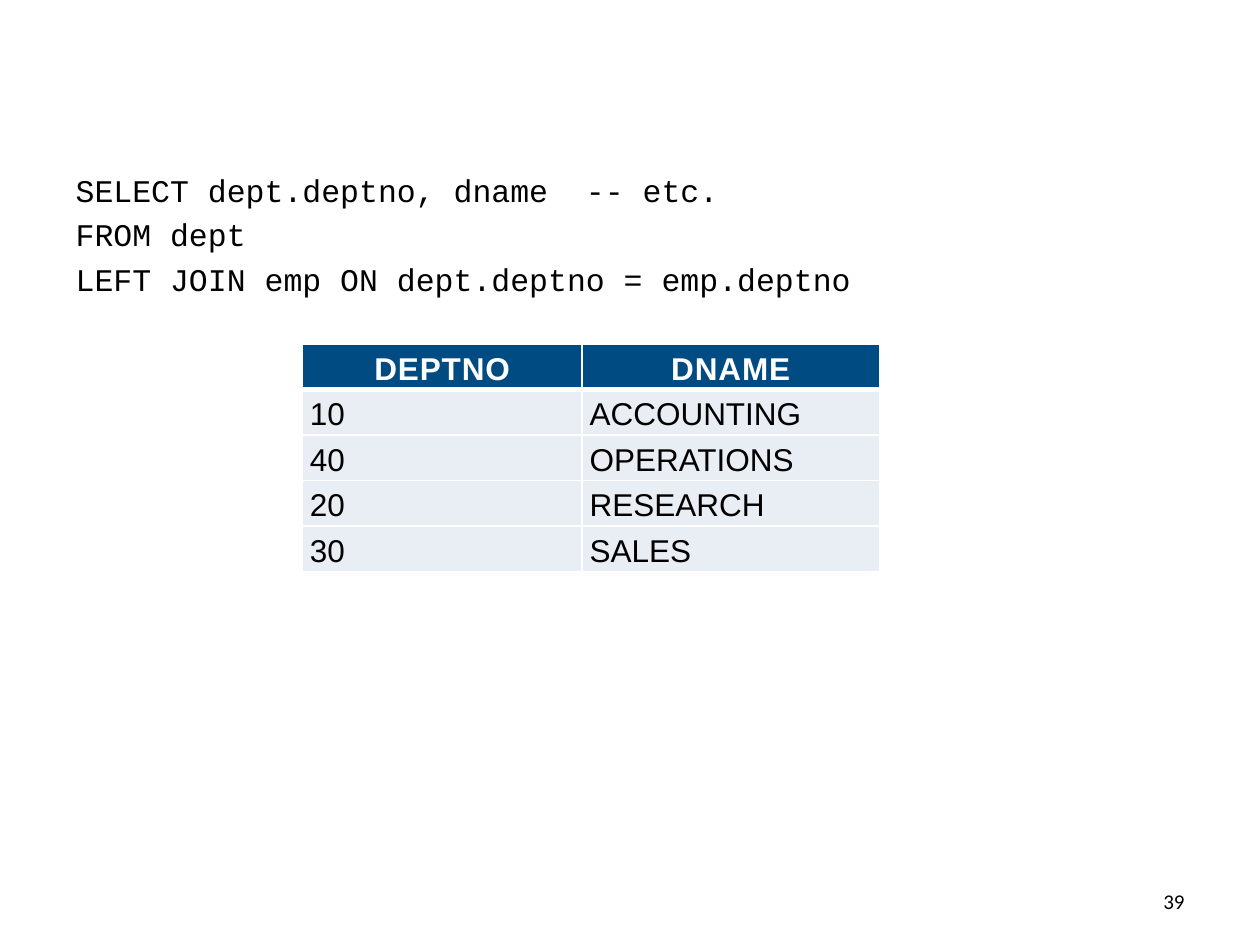
from lxml import etree
from pptx import Presentation
from pptx.dml.color import RGBColor
from pptx.enum.text import MSO_ANCHOR, MSO_AUTO_SIZE, PP_ALIGN
from pptx.oxml.ns import qn
from pptx.util import Inches, Pt

MIDDLE, BOTTOM = MSO_ANCHOR.MIDDLE, MSO_ANCHOR.BOTTOM
LEFT, CENTER, RIGHT = PP_ALIGN.LEFT, PP_ALIGN.CENTER, PP_ALIGN.RIGHT
NO_FIT = MSO_AUTO_SIZE.NONE

BLACK = RGBColor(0, 0, 0)
WHITE = RGBColor(255, 255, 255)
NAVY = RGBColor(0x00, 0x4B, 0x82)
PALE = RGBColor(0xE9, 0xED, 0xF4)

QUERY = [
    "SELECT dept.deptno, dname  -- etc.",
    "FROM dept",
    "LEFT JOIN emp ON dept.deptno = emp.deptno",
]
ROWS = [
    ("DEPTNO", "DNAME"),
    ("10", "ACCOUNTING"),
    ("40", "OPERATIONS"),
    ("20", "RESEARCH"),
    ("30", "SALES"),
]
WIDTHS = (2.22, 2.36)


def style(par, face, size, color, bold=False):
    for run in par.runs:
        font = run.font
        font.name, font.size, font.bold = face, Pt(size), bold
        font.color.rgb = color


def place(shape, box):
    shape.left, shape.top, shape.width, shape.height = map(Inches, box)


def add_query(slide, box):
    body = slide.placeholders[1]
    place(body, box)
    frame = body.text_frame
    frame.text = "\n".join(QUERY)
    frame.auto_size = NO_FIT
    for par in frame.paragraphs:
        props = par._p.get_or_add_pPr()
        props.set("marL", "0")
        props.set("indent", "0")
        etree.SubElement(props, qn("a:buNone"))
        style(par, "Courier New", 18, BLACK)


def set_edges(cell, head):
    """Draw white cell borders, with a thick line below the header."""
    props = cell._tc.get_or_add_tcPr()
    for spot, side in enumerate("LRTB"):
        width = 3 if head and side == "B" else 1
        line = etree.Element(qn(f"a:ln{side}"), w=str(Pt(width)))
        fill = etree.SubElement(line, qn("a:solidFill"))
        etree.SubElement(fill, qn("a:srgbClr"), val=str(WHITE))
        props.insert(spot, line)


def fill_cell(cell, text, head):
    cell.text = text
    cell.margin_left = cell.margin_right = Inches(0.06)
    cell.margin_top = cell.margin_bottom = Inches(0.02)
    cell.vertical_anchor = BOTTOM if head else MIDDLE
    cell.fill.solid()
    cell.fill.fore_color.rgb = NAVY if head else PALE
    par = cell.text_frame.paragraphs[0]
    par.alignment = CENTER if head else LEFT
    par.line_spacing = 1.15
    style(par, "Arial", 18, WHITE if head else BLACK, head)
    if head:
        par.runs[0].font._element.set("spc", "50")
    set_edges(cell, head)


def add_depts(slide, box):
    frame = slide.shapes.add_table(len(ROWS), len(WIDTHS), *map(Inches, box))
    table = frame.table
    for col, width in zip(table.columns, WIDTHS):
        col.width = Inches(width)
    for r, row in enumerate(ROWS):
        for c, text in enumerate(row):
            fill_cell(table.cell(r, c), text, r == 0)


def add_number(slide, box, text):
    frame = slide.shapes.add_textbox(*map(Inches, box)).text_frame
    frame.word_wrap = True
    frame.vertical_anchor = MIDDLE
    frame.text = text
    par = frame.paragraphs[0]
    par.alignment = RIGHT
    style(par, "Calibri", 12, BLACK)


def main():
    deck = Presentation()
    deck.slide_width, deck.slide_height = Inches(10), Inches(7.5)
    slide = deck.slides.add_slide(deck.slide_layouts[1])
    title = slide.shapes.title._element
    title.getparent().remove(title)
    add_query(slide, (0.5, 1.31, 9, 1.42))
    add_depts(slide, (2.4, 2.73, sum(WIDTHS), 1.8))
    add_number(slide, (7.17, 6.95, 2.33, 0.4), "39")
    deck.save("out.pptx")


if __name__ == "__main__":
    main()
